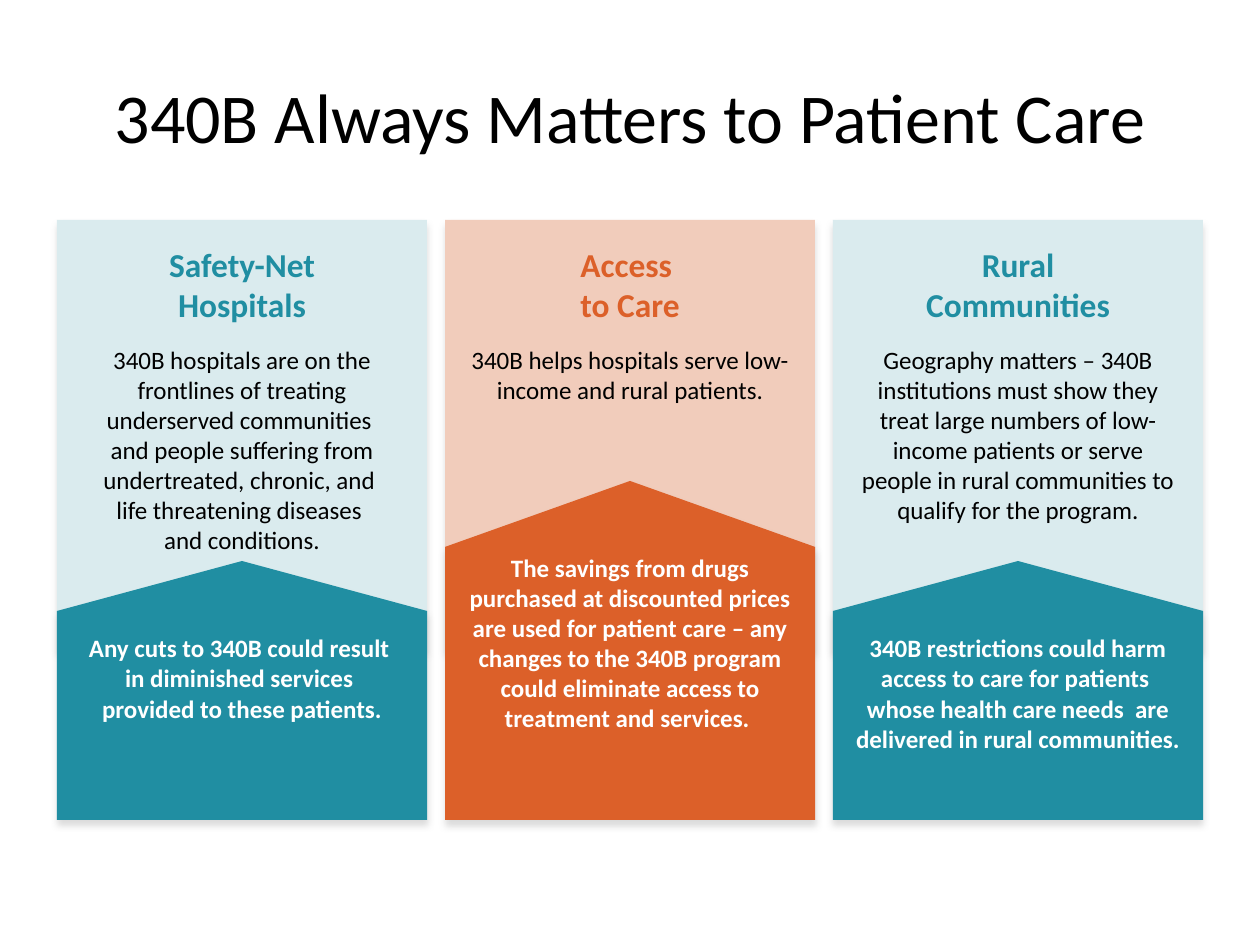
"""Build the slide on why 340B matters to patient care."""
from dataclasses import dataclass

from lxml import etree
from pptx import Presentation, util as u
from pptx.dml.color import RGBColor
from pptx.enum import shapes, text
from pptx.oxml import ns

PX = 914400 / 126
FONT = "Calibri"
BLACK = RGBColor(0x00, 0x00, 0x00)
WHITE = RGBColor(0xFF, 0xFF, 0xFF)
TEAL = RGBColor(0x20, 0x8E, 0xA2)
PALE_TEAL = RGBColor(0xDA, 0xEB, 0xEE)
ORANGE = RGBColor(0xDC, 0x60, 0x29)
PALE_ORANGE = RGBColor(0xF1, 0xCC, 0xBB)
SHADOW = RGBColor(0xA6, 0xA6, 0xA6)

PANEL_LEFT, PANEL_TOP = 57, 220
PANEL_WIDTH, PANEL_HEIGHT, PANEL_PITCH = 370, 430, 388
ARROW_BOTTOM = 820


@dataclass(frozen=True)
class Copy:
    """One paragraph with its look."""
    words: str
    size: float
    color: RGBColor
    bold: bool = False
    after: float = 0


@dataclass(frozen=True)
class Panel:
    """One pale column with a strong upward arrow at its foot."""
    column: int
    heading: str
    body: str
    warning: str
    strong: RGBColor
    pale: RGBColor
    peak: int
    shoulder: int


PANELS = [
    Panel(1, "Access \nto Care",
          "340B helps hospitals serve low-income and rural patients.",
          "The savings from drugs purchased at discounted prices are used for patient care – any "
          "changes to the 340B program could eliminate access to treatment and services. ",
          ORANGE, PALE_ORANGE, 481, 547),
    Panel(0, "Safety-Net\nHospitals",
          "340B hospitals are on the frontlines of treating underserved communities \n"
          "and people suffering from undertreated, chronic, and \n"
          "life threatening diseases \nand conditions.",
          "Any cuts to 340B could result \nin diminished services \n"
          "provided to these patients.",
          TEAL, PALE_TEAL, 561, 611),
    Panel(2, "Rural\nCommunities",
          "Geography matters – 340B institutions must show they treat large numbers of "
          "low-income patients or serve people in rural communities to qualify for the program.",
          "340B restrictions could harm access to care for patients \n"
          "whose health care needs  are delivered in rural communities.",
          TEAL, PALE_TEAL, 561, 611),
]


def px(length: int) -> u.Emu:
    """Turn px into EMU."""
    return u.Emu(round(length * PX))


def write(shape, copies: list[Copy], insets: tuple[int, int, int, int],
          anchor=text.MSO_ANCHOR.TOP) -> None:
    """Fill a shape with centred paragraphs; insets run left, top, right, bottom."""
    frame = shape.text_frame
    frame.word_wrap = True
    frame.vertical_anchor = anchor
    (frame.margin_left, frame.margin_top,
     frame.margin_right, frame.margin_bottom) = map(px, insets)
    for index, copy in enumerate(copies):
        para = frame.add_paragraph() if index else frame.paragraphs[0]
        para.alignment = text.PP_ALIGN.CENTER
        para.space_after = u.Pt(copy.after)
        for number, line in enumerate(copy.words.split("\n")):
            if number:
                para.add_line_break()
            span = para.add_run()
            span.text = line
            span.font.name = FONT
            span.font.size = u.Pt(copy.size)
            span.font.bold = copy.bold
            span.font.color.rgb = copy.color


def paint(shape, color: RGBColor) -> None:
    """Give a shape a plain fill, no line and a soft shadow below."""
    shape.fill.solid()
    shape.fill.fore_color.rgb = color
    shape.line.fill.background()
    shape.shadow.inherit = False
    effects = shape._element.spPr.find(ns.qn("a:effectLst"))
    shadow = etree.SubElement(effects, ns.qn("a:outerShdw"), blurRad=str(u.Pt(4)),
                              dist=str(u.Pt(3)), dir="5400000", rotWithShape="0")
    tint = etree.SubElement(shadow, ns.qn("a:srgbClr"), val=str(SHADOW))
    etree.SubElement(tint, ns.qn("a:alpha"), val="40000")


def draw_panel(slide, panel: Panel) -> None:
    """Draw one column as a group of card and arrow."""
    group = slide.shapes.add_group_shape()
    left = PANEL_LEFT + panel.column * PANEL_PITCH
    right = left + PANEL_WIDTH
    card = group.shapes.add_shape(shapes.MSO_SHAPE.RECTANGLE, px(left), px(PANEL_TOP),
                                  px(PANEL_WIDTH), px(PANEL_HEIGHT))
    paint(card, panel.pale)
    write(card, [Copy(panel.heading, 19.1, panel.strong, True, 11.4),
                 Copy(panel.body, 14.3, BLACK, False, 5.7)], (24, 24, 24, 12))

    outline = group.shapes.build_freeform(left + PANEL_WIDTH // 2, panel.peak, scale=PX)
    outline.add_line_segments([(right, panel.shoulder), (right, ARROW_BOTTOM),
                               (left, ARROW_BOTTOM), (left, panel.shoulder)], close=True)
    arrow = outline.convert_to_shape()
    paint(arrow, panel.strong)
    write(arrow, [Copy(panel.warning, 14.3, WHITE, True, 6)], (12, 72, 12, 12))


def main() -> None:
    """Build and save the deck."""
    deck = Presentation()
    deck.slide_width, deck.slide_height = px(1260), px(945)
    slide = deck.slides.add_slide(deck.slide_layouts[6])
    title = slide.shapes.add_textbox(px(63), px(42), px(1134), px(147))
    write(title, [Copy("340B Always Matters to Patient Care", 40, BLACK)],
          (12, 6, 12, 6), text.MSO_ANCHOR.MIDDLE)
    for panel in PANELS:
        draw_panel(slide, panel)
    deck.save("out.pptx")


if __name__ == "__main__":
    main()
